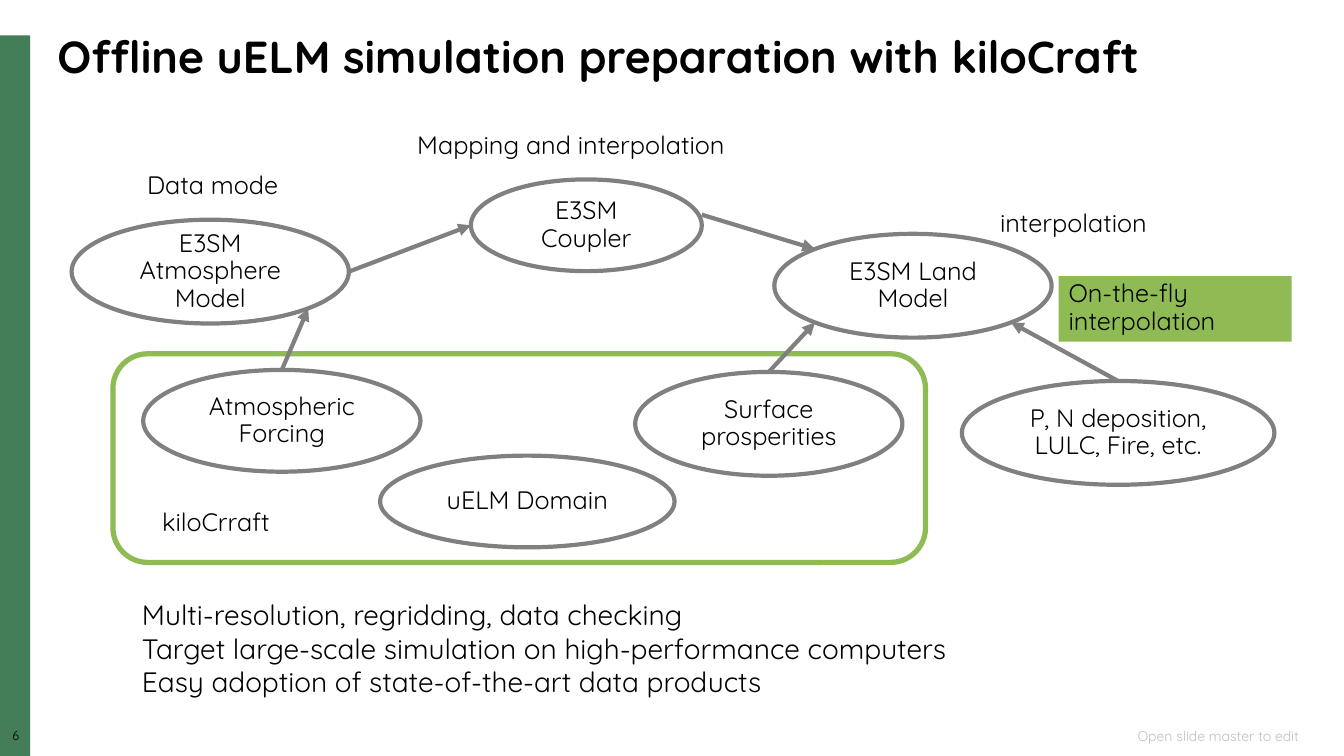
from dataclasses import dataclass
from math import cos, radians, sin

from lxml import etree
from pptx import Presentation
from pptx import util as u
from pptx.dml.color import RGBColor
from pptx.enum import shapes, text
from pptx.oxml import ns

Inches, Pt = u.Inches, u.Pt
KINDS, ALIGN, ANCHOR = shapes.MSO_SHAPE, text.PP_ALIGN, text.MSO_ANCHOR


@dataclass(frozen=True)
class Theme:
    font: str = "Quicksand"
    ink: str = "000000"
    paper: str = "FFFFFF"
    outline: str = "808080"
    band: str = "447E59"
    accent: str = "8FBB55"
    muted: str = "BFBFBF"
    title: int = 32
    notes: int = 20
    label: int = 18
    footer: int = 10
    number: int = 9


THEME = Theme()


def color(value):
    return RGBColor.from_string(value)


def write(shape, words, size=THEME.label, ink=THEME.ink, bold=False,
          align=ALIGN.LEFT, anchor=ANCHOR.TOP, spacing=0.9, insets=(0.1, 0.05)):
    frame = shape.text_frame
    frame.text = words
    frame.word_wrap = True
    frame.vertical_anchor = anchor
    frame.margin_left = frame.margin_right = Inches(insets[0])
    frame.margin_top = frame.margin_bottom = Inches(insets[1])
    for para in frame.paragraphs:
        para.alignment = align
        para.line_spacing = spacing
        for span in para.runs:
            span.font.name = THEME.font
            span.font.size = Pt(size)
            span.font.bold = bold
            span.font.color.rgb = color(ink)


def add_text(page, area, words, **style):
    box = page.shapes.add_textbox(*map(Inches, area))
    write(box, words, **style)
    return box


def add_block(page, kind, area, fill, line=None, width=0):
    block = page.shapes.add_shape(kind, *map(Inches, area))
    block.shadow.inherit = False
    block.fill.solid()
    block.fill.fore_color.rgb = color(fill)
    if line:
        block.line.color.rgb = color(line)
        block.line.width = Pt(width)
    else:
        block.line.fill.background()
    return block


def add_node(page, area, words):
    node = add_block(page, KINDS.OVAL, area, THEME.paper, THEME.outline, 3)
    write(node, words, align=ALIGN.CENTER, anchor=ANCHOR.MIDDLE, insets=(0.2, 0.2))
    return node


def rim(node, degrees):
    """Point on an ellipse, measured clockwise from its right end."""
    angle = radians(degrees)
    return (int(node.left + node.width / 2 * (1 + cos(angle))),
            int(node.top + node.height / 2 * (1 + sin(angle))))


def add_arrow(page, start, end):
    arrow = page.shapes.add_connector(shapes.MSO_CONNECTOR.STRAIGHT, *start, *end)
    arrow.line.color.rgb = color(THEME.outline)
    arrow.line.width = Pt(3)
    head = etree.SubElement(arrow.line._get_or_add_ln(), ns.qn("a:tailEnd"))
    head.set("type", "triangle")
    etree.SubElement(arrow._element.spPr, ns.qn("a:effectLst"))
    return arrow


def main():
    deck = Presentation()
    deck.slide_width, deck.slide_height = Inches(13.33), Inches(7.5)
    page = deck.slides.add_slide(deck.slide_layouts[6])

    # Side band, slide number, footer and title
    add_block(page, KINDS.RECTANGLE, (0, 0.35, 0.3, 7.15), THEME.band)
    add_text(page, (0, 7.24, 0.31, 0.17), "6", size=THEME.number,
             align=ALIGN.CENTER, insets=(0, 0))
    add_text(page, (8.76, 7.2, 4.22, 0.2), "Open slide master to edit",
             size=THEME.footer, ink=THEME.muted, align=ALIGN.RIGHT,
             anchor=ANCHOR.MIDDLE, spacing=1.0)
    add_text(page, (0.47, 0.3, 12.5, 0.59),
             "Offline uELM simulation preparation with kiloCraft",
             size=THEME.title, bold=True)

    # Group frame and model nodes
    add_block(page, KINDS.ROUNDED_RECTANGLE, (1.12, 3.51, 8.06, 2.07),
              THEME.paper, THEME.accent, 3.75)
    atmosphere = add_node(page, (0.71, 2.18, 2.75, 1.03), "E3SM Atmosphere Model")
    coupler = add_node(page, (4.67, 1.78, 2.29, 0.91), "E3SM Coupler")
    land = add_node(page, (7.68, 2.32, 2.75, 1.03), "E3SM Land Model")
    forcing = add_node(page, (1.42, 3.67, 2.75, 1.01), "Atmospheric Forcing")
    surface = add_node(page, (6.3, 3.69, 2.65, 1.03), "Surface prosperities")
    deposition = add_node(page, (9.54, 3.78, 3.1, 1.03),
                          "P, N deposition, LULC, Fire, etc.")
    add_node(page, (3.77, 4.52, 2.92, 0.91), "uELM Domain")

    # Data flow between the models
    add_arrow(page, rim(atmosphere, 0), rim(coupler, 180))
    add_arrow(page, (Inches(6.96), Inches(2.13)), rim(land, 225))

    # Inputs rising from the top of each source node
    for source, target, degrees in ((forcing, atmosphere, 45),
                                    (surface, land, 135),
                                    (deposition, land, 45)):
        arrow = add_arrow(page, rim(source, 270), rim(target, degrees))
        arrow.begin_connect(source, 0)

    # Labels
    for area, words in (((1.36, 1.66, 1.68, 0.37), "Data mode"),
                        ((4.04, 1.27, 3.5, 0.37), "Mapping and interpolation"),
                        ((9.82, 2.04, 1.95, 0.37), "interpolation"),
                        ((1.51, 5.01, 2.16, 0.37), "kiloCrraft")):
        add_text(page, area, words)
    callout = add_block(page, KINDS.RECTANGLE, (10.5, 2.74, 2.31, 0.65), THEME.accent)
    write(callout, "On-the-fly interpolation")

    # Closing notes
    add_text(page, (1.31, 5.88, 10.34, 1.11),
             "Multi-resolution, regridding, data checking\n"
             "Target large-scale simulation on high-performance computers\n"
             "Easy adoption of state-of-the-art data products",
             size=THEME.notes, spacing=1.0)

    deck.save("out.pptx")


if __name__ == "__main__":
    main()
